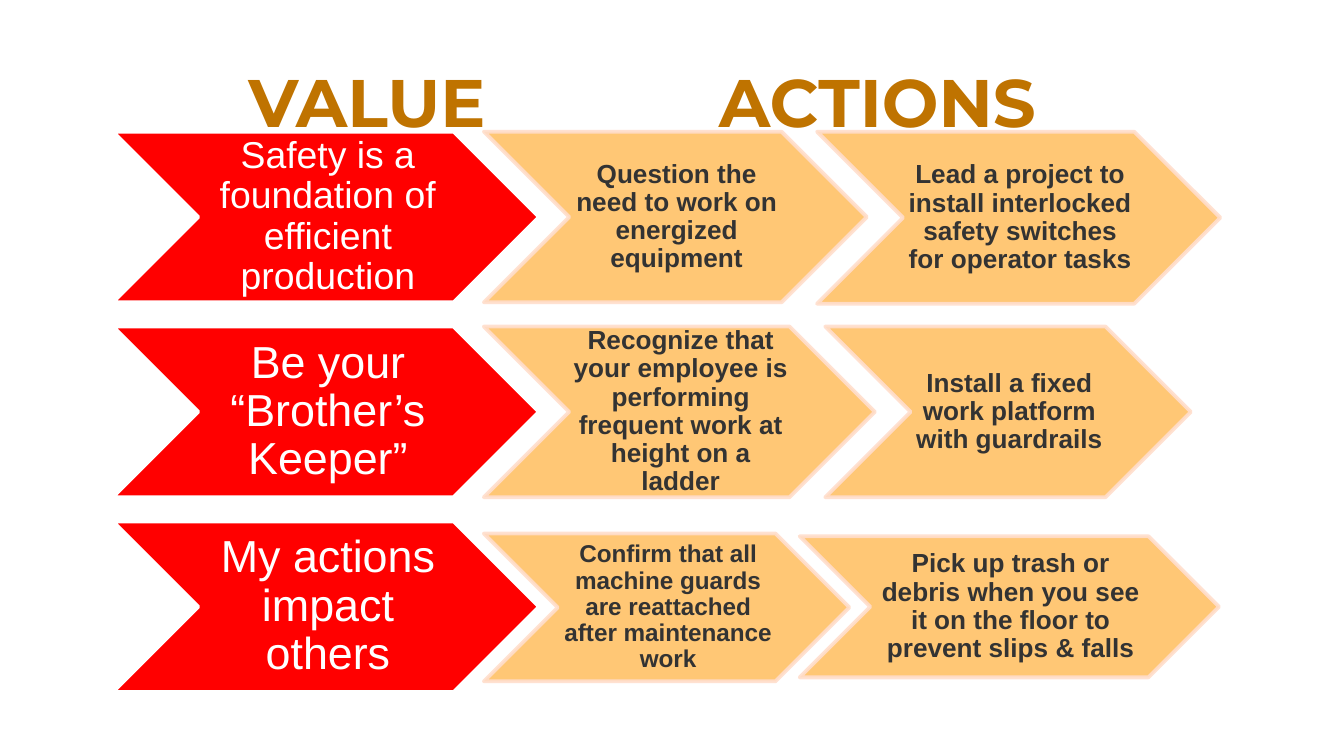
from dataclasses import dataclass

from lxml.etree import SubElement
from pptx import Presentation
from pptx.dml.color import RGBColor
from pptx.enum.shapes import MSO_SHAPE
from pptx.enum.text import MSO_ANCHOR, MSO_AUTO_SIZE, PP_ALIGN
from pptx.oxml.ns import qn
from pptx.util import Emu, Pt

PX = 9144  # one px is a hundredth of an inch
SLIDE_WIDTH = 1000


@dataclass(frozen=True)
class Theme:
    body_font: str = "Arial"
    heading_font: str = "Montserrat"
    heading: str = "BF7300"
    value_fill: str = "FF0000"
    value_line: str = "FFFFFF"
    value_text: str = "FFFFFF"
    action_fill: str = "FFC266"
    action_line: str = "FFDECC"
    action_text: str = "333333"
    action_opacity: int = 90
    line_width: int = 2
    heading_size: int = 36
    value_size: int = 24
    long_value_size: int = 20
    action_size: int = 14
    small_action_size: int = 13


THEME = Theme()

# Layout of the chevron rows
ROW_LEFT, ROW_TOP, ROW_PITCH, ROW_HEIGHT = 84, 98, 145, 128
VALUE_WIDTH, VALUE_HEIGHT = 317, 127
VALUE_OVERLAP, ACTION_OVERLAP = 41, 37

# Heading: text, left, width
HEADINGS = [("VALUE", 175, 207), ("ACTIONS", 525, 274)]

# Row: value, value size, actions as (text, width, height, size)
ROWS = [
    ("Safety is a foundation of efficient production", THEME.long_value_size, [
        ("Question the need to work on energized equipment",
         285, 127, THEME.action_size),
        ("Lead a project to install interlocked safety switches for operator tasks",
         300, 128, THEME.action_size),
    ]),
    ("Be your “Brother’s Keeper”", THEME.value_size, [
        ("Recognize that your employee is performing frequent work at height on a ladder",
         291, 127, THEME.action_size),
        ("Install a fixed work platform with guardrails",
         272, 127, THEME.action_size),
    ]),
    ("My actions impact others", THEME.value_size, [
        ("Confirm that all machine guards are reattached after maintenance work",
         272, 110, THEME.small_action_size),
        ("Pick up trash or debris when you see it on the floor to prevent slips & falls",
         312, 105, THEME.action_size),
    ]),
]


def px(*values):
    return [Emu(round(value * PX)) for value in values]


def set_opacity(fill_element, percent):
    color = fill_element.find(qn("a:solidFill"))[0]
    SubElement(color, qn("a:alpha"), val=str(percent * 1000))


def add_text(slide, text, left, top, width, height, *, size, color,
             font=THEME.body_font, bold=False, align=None, anchor=MSO_ANCHOR.TOP,
             line_spacing=None, margins=(10, 5, 10, 5), wrap=True):
    frame = slide.shapes.add_textbox(*px(left, top, width, height)).text_frame
    frame.word_wrap = wrap
    frame.auto_size = MSO_AUTO_SIZE.NONE if wrap else MSO_AUTO_SIZE.SHAPE_TO_FIT_TEXT
    frame.vertical_anchor = anchor
    (frame.margin_left, frame.margin_top,
     frame.margin_right, frame.margin_bottom) = px(*margins)
    paragraph = frame.paragraphs[0]
    paragraph.alignment = align
    paragraph.line_spacing = line_spacing
    run = paragraph.add_run()
    run.text = text
    run.font.name = font
    run.font.size = Pt(size)
    run.font.bold = bold
    run.font.color.rgb = RGBColor.from_string(color)


def add_chevron(slide, text, left, top, width, height, *, fill, line,
                color, size, bold=False, opacity=100, left_margin=2):
    shape = slide.shapes.add_shape(MSO_SHAPE.CHEVRON, *px(left, top, width, height))
    shape.shadow.inherit = False
    shape.fill.solid()
    shape.fill.fore_color.rgb = RGBColor.from_string(fill)
    shape.line.color.rgb = RGBColor.from_string(line)
    shape.line.width = Pt(THEME.line_width)
    if opacity < 100:
        properties = shape.element.spPr
        set_opacity(properties, opacity)
        set_opacity(properties.find(qn("a:ln")), opacity)
    # The label keeps clear of the notch and the point
    add_text(slide, text, left + height / 2, top, width - height, height,
             size=size, color=color, bold=bold, align=PP_ALIGN.CENTER,
             anchor=MSO_ANCHOR.MIDDLE, line_spacing=0.9,
             margins=(left_margin, 1, 0, 1))


def add_row(slide, top, value, value_size, actions):
    # Value chevron
    add_chevron(slide, value, ROW_LEFT, top, VALUE_WIDTH, VALUE_HEIGHT,
                fill=THEME.value_fill, line=THEME.value_line,
                color=THEME.value_text, size=value_size, left_margin=3)
    # Action chevrons, each tucked into the one before and centred on the row
    left = ROW_LEFT + VALUE_WIDTH - VALUE_OVERLAP
    for text, width, height, size in actions:
        add_chevron(slide, text, left, top + (ROW_HEIGHT - height) // 2, width, height,
                    fill=THEME.action_fill, line=THEME.action_line,
                    color=THEME.action_text, size=size, bold=True,
                    opacity=THEME.action_opacity)
        left += width - ACTION_OVERLAP


def main():
    presentation = Presentation()
    # Widescreen, 16:9
    presentation.slide_width, presentation.slide_height = px(
        SLIDE_WIDTH, SLIDE_WIDTH * 9 / 16)
    slide = presentation.slides.add_slide(presentation.slide_layouts[6])

    # Rows
    for index, row in enumerate(ROWS):
        add_row(slide, ROW_TOP + index * ROW_PITCH, *row)

    # Column headings
    for text, left, width in HEADINGS:
        add_text(slide, text, left, 40, width, 71, size=THEME.heading_size,
                 color=THEME.heading, font=THEME.heading_font, bold=True, wrap=False)

    presentation.save("out.pptx")


if __name__ == "__main__":
    main()
